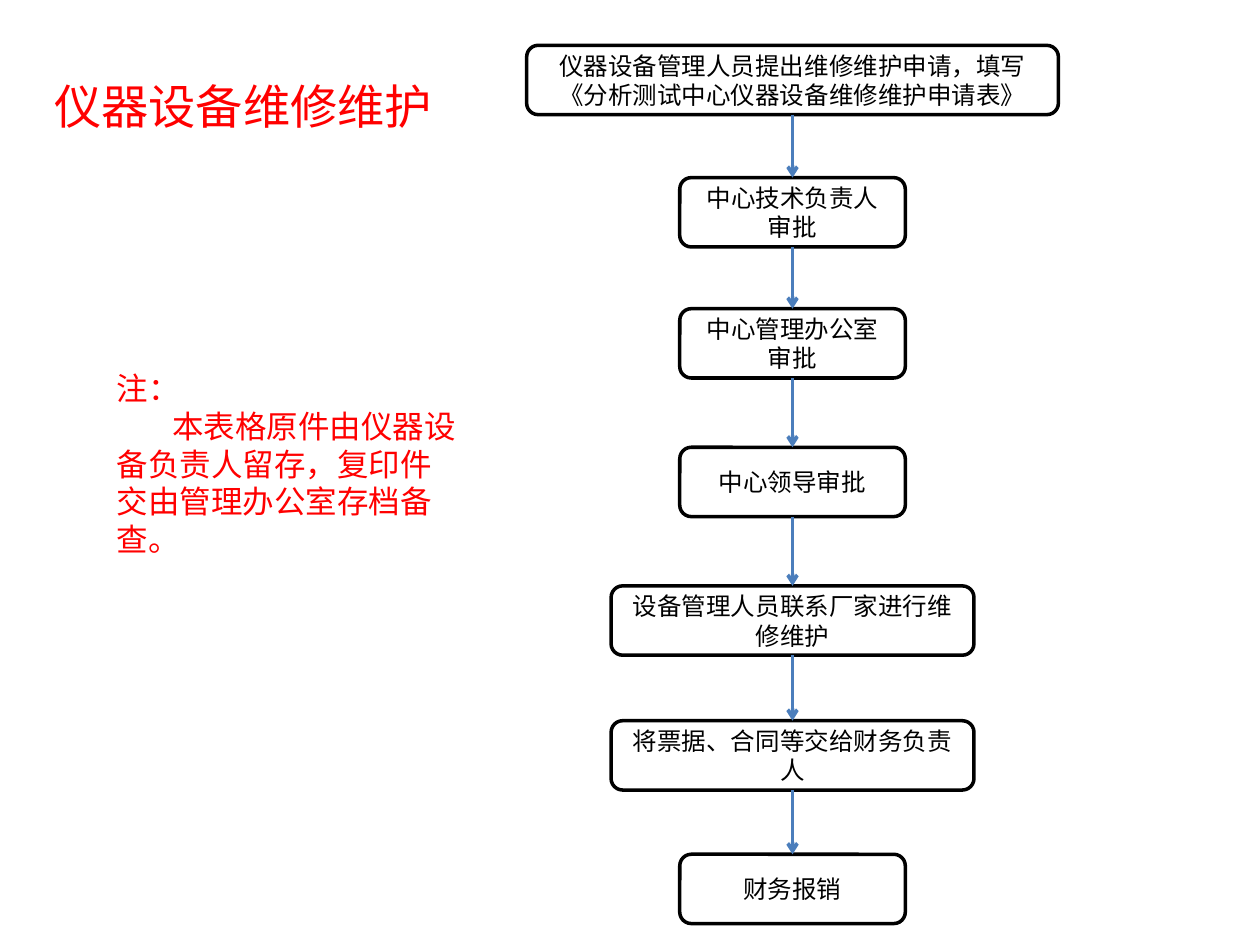
from itertools import pairwise

from lxml import etree
from pptx import Presentation
from pptx import util as u
from pptx.dml.color import RGBColor
from pptx.enum import shapes, text
from pptx.oxml.ns import qn

RED = RGBColor(0xFF, 0x00, 0x00)
BLACK = RGBColor(0x00, 0x00, 0x00)
BLUE = RGBColor(0x4B, 0x7E, 0xBC)
LATIN, CJK = "Calibri", "Noto Sans CJK JP"
COLS, ROWS = 100, 75
AXIS, STEP_H = 62.9, 5.5
NARROW, MEDIUM, WIDE = 17.9, 28.8, 42.2

STEPS = [
    (3.6, WIDE, "仪器设备管理人员提出维修维护申请，填写《分析测试中心仪器设备维修维护申请表》"),
    (14.1, NARROW, "中心技术负责人审批"),
    (24.5, NARROW, "中心管理办公室审批"),
    (35.5, NARROW, "中心领导审批"),
    (46.5, MEDIUM, "设备管理人员联系厂家进行维修维护"),
    (57.2, MEDIUM, "将票据、合同等交给财务负责人"),
    (67.8, NARROW, "财务报销"),
]
NOTE = [("注：", 0), ("本表格原件由仪器设备负责人留存，复印件交由管理办公室存档备查。", 4.4)]


class FlowSlide:
    def __init__(self, prs):
        self.s = prs.slides.add_slide(prs.slide_layouts[5])
        self.col = prs.slide_width / COLS
        self.row = prs.slide_height / ROWS

    def box(self, x, y, w, h):
        return (u.Emu(round(x * self.col)), u.Emu(round(y * self.row)),
                u.Emu(round(w * self.col)), u.Emu(round(h * self.row)))

    def run(self, p, words, size, color, font=LATIN):
        r = p.add_run()
        r.text = words
        r.font.size = u.Pt(size)
        r.font.name = font
        r.font.color.rgb = color
        ea = etree.SubElement(r.font._element, qn("a:ea"))
        ea.set("typeface", CJK)

    def title(self, words, *area):
        sp = self.s.shapes.title
        sp.left, sp.top, sp.width, sp.height = self.box(*area)
        tf = sp.text_frame
        tf.vertical_anchor = text.MSO_ANCHOR.MIDDLE
        p = tf.paragraphs[0]
        p.alignment = text.PP_ALIGN.CENTER
        self.run(p, words, 27, RED, CJK)

    def step(self, top, width, words):
        sp = self.s.shapes.add_shape(
            shapes.MSO_SHAPE.ROUNDED_RECTANGLE,
            *self.box(AXIS - width / 2, top, width, STEP_H))
        sp.shadow.inherit = False
        sp.fill.background()
        sp.line.color.rgb = BLACK
        sp.line.width = u.Pt(2)
        tf = sp.text_frame
        tf.word_wrap = True
        tf.vertical_anchor = text.MSO_ANCHOR.MIDDLE
        p = tf.paragraphs[0]
        p.alignment = text.PP_ALIGN.CENTER
        self.run(p, words, 14, BLACK)
        return sp

    def arrow(self, start, end):
        cx = self.s.shapes.add_connector(shapes.MSO_CONNECTOR.STRAIGHT, 0, 0, 0, 0)
        cx.begin_connect(start, 2)
        cx.end_connect(end, 0)
        cx.line.color.rgb = BLUE
        cx.line.width = u.Pt(2)
        tail = etree.SubElement(cx.line._get_or_add_ln(), qn("a:tailEnd"))
        tail.set("type", "arrow")
        etree.SubElement(cx._element.spPr, qn("a:effectLst"))

    def note(self, lines, *area):
        tf = self.s.shapes.add_textbox(*self.box(*area)).text_frame
        tf.word_wrap = True
        tf.auto_size = text.MSO_AUTO_SIZE.SHAPE_TO_FIT_TEXT
        for i, (words, indent) in enumerate(lines):
            p = tf.add_paragraph() if i else tf.paragraphs[0]
            p._p.get_or_add_pPr().set("indent", str(round(indent * self.col)))
            self.run(p, words, 18, RED)


def main():
    prs = Presentation()
    prs.slide_width, prs.slide_height = u.Inches(10), u.Inches(7.5)
    slide = FlowSlide(prs)
    slide.title("仪器设备维修维护", 2, 4.4, 34.6, 7.9)
    steps = [slide.step(*step) for step in STEPS]
    for start, end in pairwise(steps):
        slide.arrow(start, end)
    slide.note(NOTE, 8.3, 28.8, 29.1, 16.2)
    prs.save("out.pptx")


if __name__ == "__main__":
    main()
